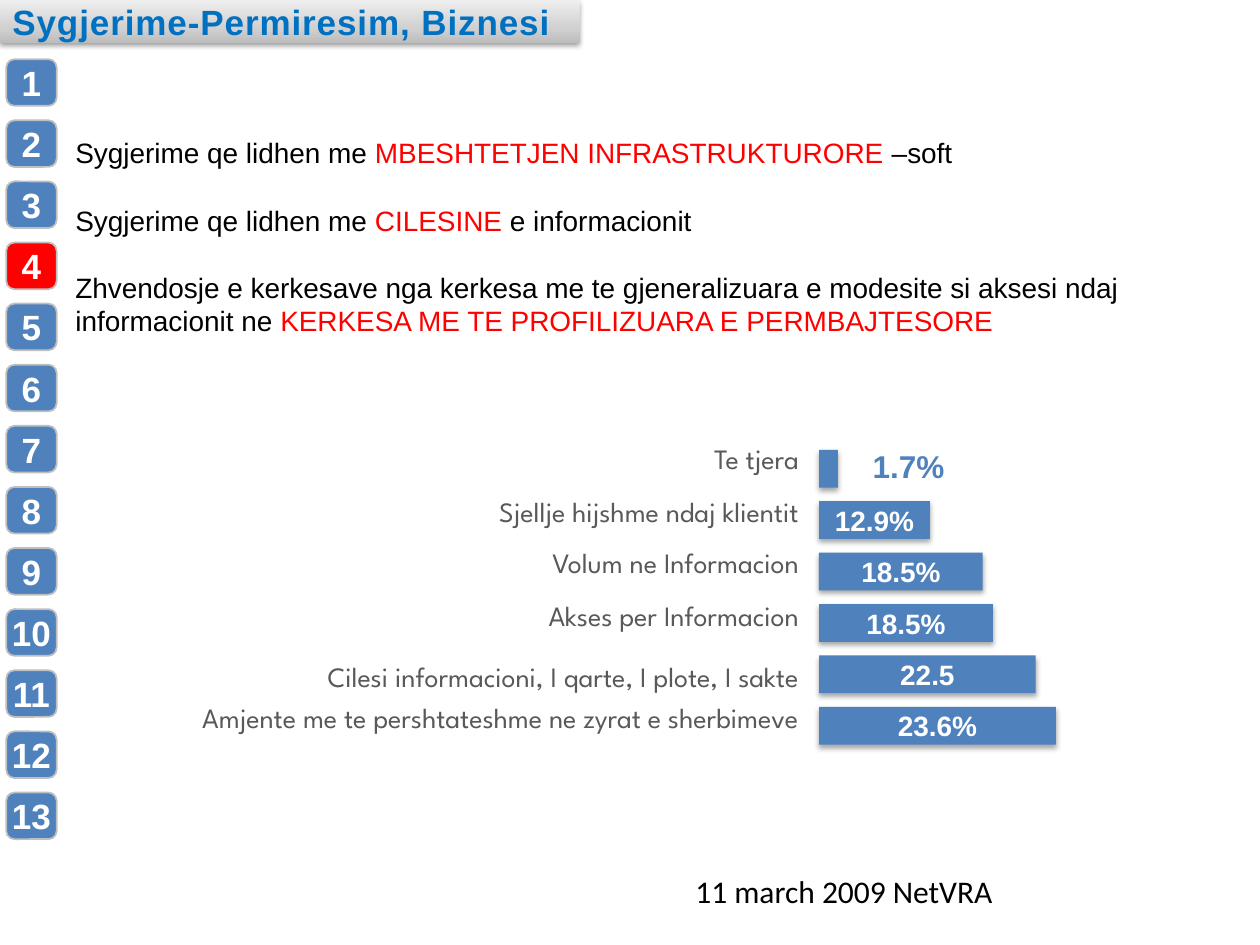
from lxml import etree
from pptx import Presentation
from pptx.dml.color import RGBColor
from pptx.enum.shapes import MSO_SHAPE
from pptx.enum.text import MSO_ANCHOR, PP_ALIGN
from pptx.oxml import parse_xml
from pptx.oxml.ns import nsdecls, qn
from pptx.util import Inches, Pt

RECTANGLE, ROUNDED = MSO_SHAPE.RECTANGLE, MSO_SHAPE.ROUNDED_RECTANGLE
TOP, MIDDLE = MSO_ANCHOR.TOP, MSO_ANCHOR.MIDDLE
LEFT, CENTER, RIGHT = PP_ALIGN.LEFT, PP_ALIGN.CENTER, PP_ALIGN.RIGHT

COLORS = {
    "blue": "4F81BD", "title": "0070C0", "red": "FF0000", "border": "BFBFBF",
    "black": "000000", "white": "FFFFFF", "label": "595959",
}
TITLE_STOPS = [(0, "BDBDBD"), (35, "D1D1D1"), (100, "EEEEEE")]
FORMATS = {
    "title": {"name": "Arial", "size": Pt(20), "bold": True},
    "number": {"name": "Arial", "size": Pt(20), "bold": True},
    "body": {"name": "Arial", "size": Pt(16)},
    "label": {"name": "League Spartan", "size": Pt(16)},
    "value": {"name": "Arial", "size": Pt(16), "bold": True},
    "outer_value": {"name": "Arial", "size": Pt(18), "bold": True},
    "footer": {"name": "Calibri", "size": Pt(18)},
}
STEPS, CURRENT_STEP = 13, 4
SUGGESTIONS = [
    [("Sygjerime qe lidhen me ", "black"),
     ("MBESHTETJEN INFRASTRUKTURORE ", "red"), ("–soft", "black")],
    [("Sygjerime qe lidhen me ", "black"), ("CILESINE", "red"),
     (" e informacionit", "black")],
    [("Zhvendosje e kerkesave nga kerkesa me te gjeneralizuara e modesite "
      "si aksesi ndaj informacionit ne ", "black"),
     ("KERKESA ME TE PROFILIZUARA E PERMBAJTESORE", "red")],
]
BARS = [
    ("Te tjera", 0, 0.15, "1.7%"),
    ("Sjellje hijshme ndaj klientit", 0.42, 0.88, "12.9%"),
    ("Volum ne Informacion", 0.83, 1.3, "18.5%"),
    ("Akses per Informacion", 1.25, 1.38, "18.5%"),
    ("Cilesi informacioni, I qarte, I plote, I sakte", 1.73, 1.72, "22.5"),
    ("Amjente me te pershtateshme ne zyrat e sherbimeve", 2.06, 1.88, "23.6%"),
]


def write(shape, paragraphs, style, align=LEFT, anchor=MIDDLE,
          insets=(0, 0, 0, 0), wrap=True, **spacing):
    frame = shape.text_frame
    frame.word_wrap = wrap
    frame.vertical_anchor = anchor
    for side, inset in zip(("left", "top", "right", "bottom"), insets):
        setattr(frame, f"margin_{side}", Inches(inset))
    for index, runs in enumerate(paragraphs):
        paragraph = frame.add_paragraph() if index else frame.paragraphs[0]
        paragraph.alignment = align
        if index:
            for name, value in spacing.items():
                setattr(paragraph, name, value)
        for text, color in runs:
            run = paragraph.add_run()
            run.text = text
            for name, value in FORMATS[style].items():
                setattr(run.font, name, value)
            run.font.color.rgb = RGBColor.from_string(COLORS[color])


def add_text(slide, box, paragraphs, style, **options):
    shape = slide.shapes.add_textbox(*map(Inches, box))
    write(shape, paragraphs, style, **options)
    return shape


def add_block(slide, kind, box, fill, border=None):
    shape = slide.shapes.add_shape(kind, *map(Inches, box))
    shape.shadow.inherit = False
    shape.fill.solid()
    shape.fill.fore_color.rgb = RGBColor.from_string(COLORS[fill])
    if border:
        shape.line.color.rgb = RGBColor.from_string(COLORS[border])
        shape.line.width = Pt(1)
    else:
        shape.line.fill.background()
    return shape


def add_shadow(shape, opacity, distance):
    effects = shape._element.spPr.find(qn("a:effectLst"))
    shadow = etree.SubElement(
        effects, qn("a:outerShdw"), blurRad=str(Pt(3.1)),
        dist=str(Pt(distance)), dir="5400000", rotWithShape="0")
    color = etree.SubElement(shadow, qn("a:srgbClr"), val=COLORS["black"])
    etree.SubElement(color, qn("a:alpha"), val=str(opacity * 1000))


def add_title(slide, box):
    shape = add_block(slide, RECTANGLE, box, "border")
    stops = "".join(
        f'<a:gs pos="{position * 1000}"><a:srgbClr val="{color}"/></a:gs>'
        for position, color in TITLE_STOPS)
    gradient = parse_xml(
        f'<a:gradFill {nsdecls("a")}><a:gsLst>{stops}</a:gsLst>'
        '<a:lin ang="16200000" scaled="0"/></a:gradFill>')
    properties = shape._element.spPr
    properties.replace(properties.find(qn("a:solidFill")), gradient)
    add_shadow(shape, 38, 1.6)
    write(shape, [[("Sygjerime-Permiresim, Biznesi", "title")]], "title",
          insets=(0.1, 0, 0.1, 0))
    shape.text_frame.paragraphs[0].runs[0].font._element.set("spc", "50")


def add_steps(slide, box):
    left, top, width, height = box
    step_height = 0.37
    pitch = (height - step_height) / (STEPS - 1)
    for index in range(STEPS):
        number = index + 1
        fill = "red" if number == CURRENT_STEP else "blue"
        shape = add_block(slide, ROUNDED,
                          (left, top + index * pitch, width, step_height),
                          fill, "border")
        shape.adjustments[0] = 0.175
        write(shape, [[(str(number), "white")]], "number", align=CENTER,
              wrap=False)


def add_suggestions(slide, box):
    add_text(slide, box, SUGGESTIONS, "body", anchor=TOP,
             insets=(0.1, 0.05, 0.1, 0.05), space_before=Pt(19.2))


def add_bars(slide, box):
    left, top, width, height = box
    axis, bar_height, label_height = left + 5.83, 0.3, 0.27
    first_bar = top + 0.07
    pitch = (top + height - bar_height - first_bar) / (len(BARS) - 1)
    value_insets = (0, 0.05, 0, 0.05)
    for index, (label, label_offset, length, value) in enumerate(BARS):
        add_text(slide, (left, top + label_offset, 5.67, label_height),
                 [[(label, "label")]], "label", align=RIGHT)
        bar = add_block(slide, RECTANGLE,
                        (axis, first_bar + index * pitch, length, bar_height),
                        "blue")
        add_shadow(bar, 35, 1.8)
        if index:
            write(bar, [[(value, "white")]], "value", align=CENTER,
                  insets=value_insets)
        else:
            add_text(slide, (axis + 0.42, top, 0.58, 0.4), [[(value, "blue")]],
                     "outer_value", align=CENTER, insets=value_insets,
                     wrap=False)


def add_footer(slide, box):
    add_text(slide, box, [[("11 march 2009 NetVRA", "black")]], "footer",
             anchor=TOP, insets=(0.1, 0.05, 0.1, 0.05))


def main():
    presentation = Presentation()
    presentation.slide_width, presentation.slide_height = Inches(10), Inches(7.5)
    slide = presentation.slides.add_slide(presentation.slide_layouts[6])
    add_footer(slide, (5.42, 6.87, 2.99, 0.4))
    add_steps(slide, (0.05, 0.47, 0.4, 6.19))
    add_title(slide, (0, 0, 4.6, 0.34))
    add_suggestions(slide, (0.5, 1.03, 9.5, 1.72))
    add_bars(slide, (0.67, 3.5, 7.71, 2.41))
    presentation.save("out.pptx")


if __name__ == "__main__":
    main()
